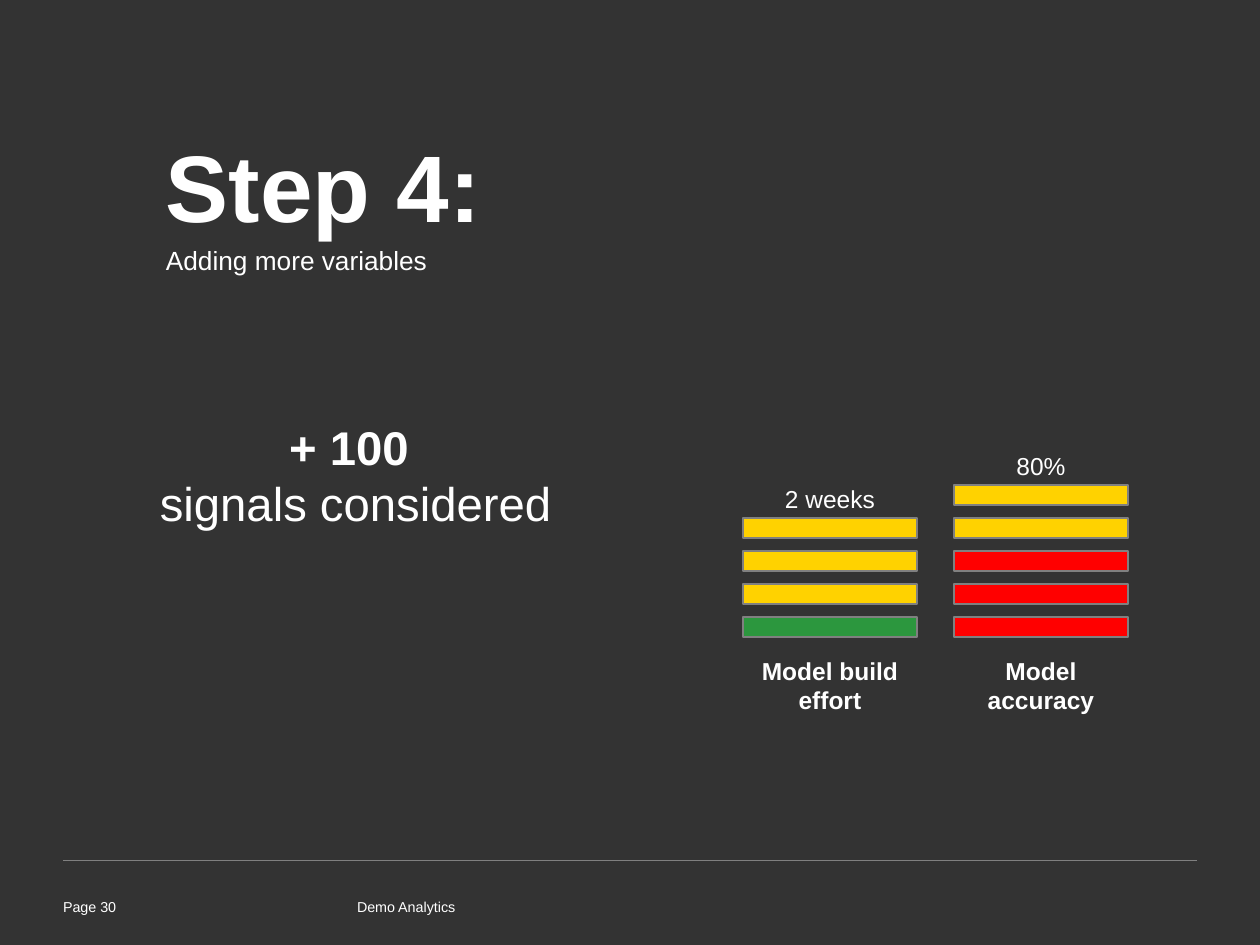
"""Build the "Step 4" slide: more variables, with build effort and accuracy bars."""
from lxml.etree import SubElement
from pptx import Presentation
from pptx.dml.color import RGBColor
from pptx.enum.shapes import MSO_CONNECTOR, MSO_SHAPE
from pptx.enum.text import PP_ALIGN
from pptx.oxml.ns import qn
from pptx.util import Emu, Pt

SCALE = 914400 / 126
WHITE, GREY, DARK = "FFFFFF", "808080", "333333"
GREEN, YELLOW, RED = "2C973E", "FFD200", "FF0000"
NO_INSET = (0, 0, 0, 0)
TOP_INSET = (0, 4, 0, 0)
LABEL_INSET = (13, 6, 13, 6)
TIGHT = {"line_spacing": 0.85, "space_after": Pt(4.5)}
CENTRED = {"alignment": PP_ALIGN.CENTER}
BAR_WIDTH, BAR_HEIGHT, BAR_STEP, BAR_BASE = 174, 20, 33, 617


def paint(color_format, value):
    color_format.rgb = RGBColor.from_string(value)


def add_text(page, place, lines, inset, para_format):
    box = page.shapes.add_textbox(*[Emu(round(v * SCALE)) for v in place])
    frame = box.text_frame
    frame.word_wrap = True
    for side, value in zip(("left", "top", "right", "bottom"), inset):
        setattr(frame, f"margin_{side}", Emu(round(value * SCALE)))
    for index, (text, size, bold) in enumerate(lines):
        para = frame.add_paragraph() if index else frame.paragraphs[0]
        for name, value in para_format.items():
            setattr(para, name, value)
        span = para.add_run()
        span.text = text
        for name, value in {"name": "Arial", "size": Pt(size), "bold": bold}.items():
            setattr(span.font, name, value)
        paint(span.font.color, WHITE)


deck = Presentation()
deck.slide_width, deck.slide_height = [Emu(round(v * SCALE)) for v in (1260, 945)]
page = deck.slides.add_slide(deck.slide_layouts[6])
page.background.fill.solid()
paint(page.background.fill.fore_color, DARK)

rule = page.shapes.add_connector(
    MSO_CONNECTOR.STRAIGHT, *[Emu(round(v * SCALE)) for v in (63, 860, 1197, 860)]
)
rule.line.width = Pt(0.25)
paint(rule.line.color, GREY)
SubElement(rule._element.spPr, qn("a:effectLst"))

add_text(page, (63, 898, 92, 28), [("Page 30", 8.2, False)], NO_INSET, {})
add_text(page, (357, 898, 474, 28), [("Demo Analytics", 8.2, False)], NO_INSET, {})
add_text(
    page, (166, 141, 1084, 137),
    [("Step 4:", 54, True), ("Adding more variables", 15, False)],
    TOP_INSET, TIGHT,
)
add_text(
    page, (121, 423, 469, 110),
    [("+ 100 ", 27, True), ("signals considered", 27, False)],
    TOP_INSET, TIGHT | CENTRED,
)

columns = [
    (743, "Model build effort", "2 weeks", [GREEN, YELLOW, YELLOW, YELLOW]),
    (954, "Model accuracy", "80%", [RED, RED, RED, YELLOW, YELLOW]),
]
for left, label, value, fills in columns:
    for level, fill in enumerate(fills):
        place = (left, BAR_BASE - level * BAR_STEP, BAR_WIDTH, BAR_HEIGHT)
        bar = page.shapes.add_shape(
            MSO_SHAPE.RECTANGLE, *[Emu(round(v * SCALE)) for v in place]
        )
        bar.shadow.inherit = False
        bar.fill.solid()
        paint(bar.fill.fore_color, fill)
        bar.line.width = Pt(0.75)
        paint(bar.line.color, GREY)
    value_top = BAR_BASE - len(fills) * BAR_STEP - 1
    add_text(page, (left, value_top, BAR_WIDTH, 29), [(value, 14, False)],
             TOP_INSET, TIGHT | CENTRED)
    add_text(page, (left, 650, BAR_WIDTH, 57), [(label, 14, True)],
             LABEL_INSET, CENTRED)

deck.save("out.pptx")
